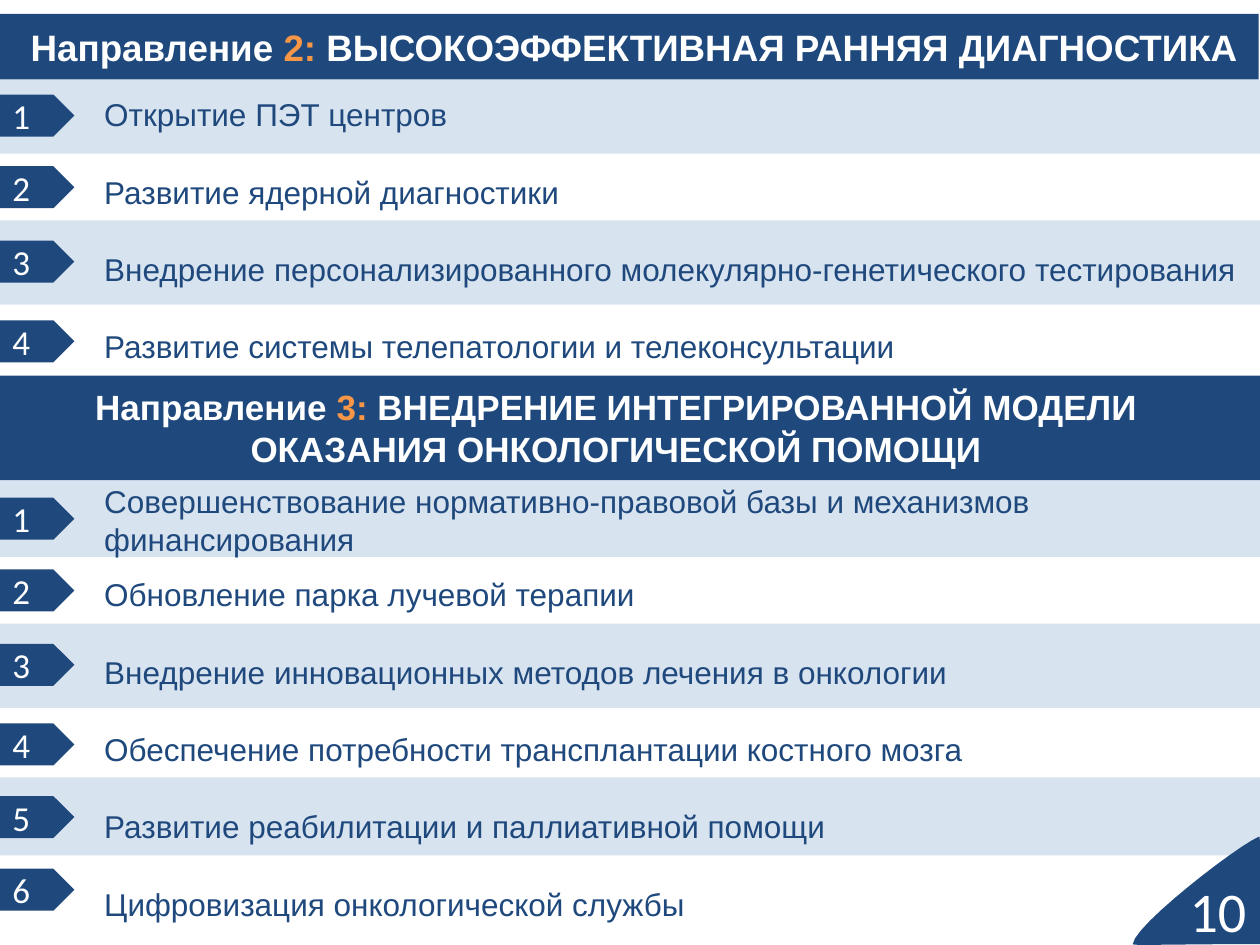
from lxml import etree
from pptx import Presentation
from pptx.dml.color import RGBColor
from pptx.enum.shapes import MSO_SHAPE
from pptx.enum.text import MSO_ANCHOR, MSO_AUTO_SIZE, PP_ALIGN
from pptx.oxml.ns import qn
from pptx.util import Pt

NAVY = RGBColor(0x1F, 0x49, 0x7D)
BLUE = RGBColor(0x4F, 0x81, 0xBD)
ORANGE = RGBColor(0xF7, 0x96, 0x46)
WHITE = RGBColor(0xFF, 0xFF, 0xFF)
RECTANGLE, PENTAGON = MSO_SHAPE.RECTANGLE, MSO_SHAPE.PENTAGON
MIDDLE = MSO_ANCHOR.MIDDLE
NO_AUTOFIT = MSO_AUTO_SIZE.NONE
LEFT, CENTER, RIGHT = PP_ALIGN.LEFT, PP_ALIGN.CENTER, PP_ALIGN.RIGHT

SLIDE_WIDTH, SLIDE_HEIGHT = 720, 540
BAND_OPACITY = "22000"
TAG_OFFSETS = (0, 41, 83.5, 129, 170.5, 212)
ITEM_LEFT, ITEM_WIDTH = 52.5, 667.5
ITEM_GAP = 22.6
CORNER_START = (647.3, 539.5)
CORNER_CURVES = (
    ((648, 529), (706, 484), (719.5, 478)),
    ((720, 478), (720, 482), (720, 492)),
    ((720, 502), (720, 523), (720, 539.5)),
    ((666, 539.5), (647.3, 540.5), (647.3, 539.5)),
)

DIAGNOSTICS = (
    "Открытие ПЭТ центров",
    "Развитие ядерной диагностики",
    "Внедрение персонализированного молекулярно-генетического тестирования",
    "Развитие системы телепатологии и телеконсультации",
)
FINANCING = "Совершенствование нормативно-правовой базы и механизмов финансирования"
CARE = (
    "Обновление парка лучевой терапии",
    "Внедрение инновационных методов лечения в онкологии",
    "Обеспечение потребности трансплантации костного мозга",
    "Развитие реабилитации и паллиативной помощи",
    "Цифровизация онкологической службы",
)


def style_font(font, name, size, color, bold=False):
    font.name = name
    font.size = Pt(size)
    font.color.rgb = color
    font.bold = bold


def paint(shape, color):
    shape.shadow.inherit = False
    shape.fill.solid()
    shape.fill.fore_color.rgb = color
    shape.line.fill.background()


def add_block(slide, kind, left, top, width, height, color):
    block = slide.shapes.add_shape(kind, Pt(left), Pt(top), Pt(width), Pt(height))
    paint(block, color)
    return block


def add_band(slide, top, height):
    band = add_block(slide, RECTANGLE, 0, top, SLIDE_WIDTH, height, BLUE)
    tint = band._element.spPr.find(qn("a:solidFill"))[0]
    etree.SubElement(tint, qn("a:alpha")).set("val", BAND_OPACITY)


def add_tags(slide, top, count):
    for number, offset in enumerate(TAG_OFFSETS[:count], 1):
        tag = add_block(slide, PENTAGON, 0, top + offset, 42.5, 24, NAVY)
        tag.text_frame.text = str(number)
        tag.text_frame.vertical_anchor = MIDDLE
        paragraph = tag.text_frame.paragraphs[0]
        paragraph.alignment = LEFT
        style_font(paragraph.runs[0].font, "Calibri", 20, WHITE)


def write_heading(shape, number, topic, size, alignment):
    frame = shape.text_frame
    frame.word_wrap = True
    frame.auto_size = NO_AUTOFIT
    frame.vertical_anchor = MIDDLE
    paragraph = frame.paragraphs[0]
    paragraph.alignment = alignment
    parts = (("Направление ", WHITE), (f"{number}: ", ORANGE), (topic, WHITE))
    for text, color in parts:
        run = paragraph.add_run()
        run.text = text
        style_font(run.font, "Arial", size, color, True)


def add_items(slide, items, top, height):
    box = slide.shapes.add_textbox(Pt(ITEM_LEFT), Pt(top), Pt(ITEM_WIDTH), Pt(height))
    frame = box.text_frame
    frame.word_wrap = True
    frame.text = "\n".join(items)
    for index, paragraph in enumerate(frame.paragraphs):
        if index:
            paragraph.space_before = Pt(ITEM_GAP)
        style_font(paragraph.runs[0].font, "Arial", 18, NAVY)


def curve_points(start, first, second, end, steps=12):
    for step in range(1, steps + 1):
        t = step / steps
        yield tuple(
            Pt((1 - t) ** 3 * a + 3 * (1 - t) ** 2 * t * b + 3 * (1 - t) * t**2 * c + t**3 * d)
            for a, b, c, d in zip(start, first, second, end)
        )


def add_page_corner(slide, number):
    builder = slide.shapes.build_freeform(*(Pt(value) for value in CORNER_START))
    start = CORNER_START
    for first, second, end in CORNER_CURVES:
        builder.add_line_segments(curve_points(start, first, second, end), close=False)
        start = end
    builder.add_line_segments([], close=True)
    paint(builder.convert_to_shape(), NAVY)

    page = slide.shapes.add_textbox(Pt(658.8), Pt(504.7), Pt(60.5), Pt(30.2))
    page.text_frame.word_wrap = True
    page.text_frame.vertical_anchor = MIDDLE
    page.text_frame.text = number
    paragraph = page.text_frame.paragraphs[0]
    paragraph.alignment = RIGHT
    style_font(paragraph.runs[0].font, "Calibri", 32, WHITE)


def add_section(slide, heading_bottom, tags_top, count):
    add_band(slide, heading_bottom, tags_top + 33.8 - heading_bottom)
    add_band(slide, tags_top + 72, 48.2)
    if count > 4:
        add_band(slide, tags_top + 159.8, 44.6)
    add_tags(slide, tags_top, count)


def main():
    presentation = Presentation()
    presentation.slide_width = Pt(SLIDE_WIDTH)
    presentation.slide_height = Pt(SLIDE_HEIGHT)
    slide = presentation.slides.add_slide(presentation.slide_layouts[5])

    title = slide.shapes.title
    title.left, title.top, title.width, title.height = Pt(0), Pt(8), Pt(719.3), Pt(37.4)
    title.fill.solid()
    title.fill.fore_color.rgb = NAVY
    title.text_frame.margin_left = Pt(17.5)
    title.text_frame.margin_right = Pt(0)
    write_heading(title, 2, "ВЫСОКОЭФФЕКТИВНАЯ РАННЯЯ ДИАГНОСТИКА", 21, LEFT)
    add_section(slide, 45.4, 54, len(DIAGNOSTICS))
    add_items(slide, DIAGNOSTICS, 50.9, 159.8)

    care_heading = add_block(slide, RECTANGLE, 0, 214.6, SLIDE_WIDTH, 59.8, NAVY)
    care_heading.text_frame.margin_right = Pt(23)
    write_heading(
        care_heading, 3, "ВНЕДРЕНИЕ ИНТЕГРИРОВАННОЙ МОДЕЛИ ОКАЗАНИЯ ОНКОЛОГИЧЕСКОЙ ПОМОЩИ", 20, CENTER
    )
    add_section(slide, 274.4, 284.4, len(CARE) + 1)
    add_items(slide, (FINANCING,), 272, 51)
    add_items(slide, CARE, 325.3, 212)

    add_page_corner(slide, "10")
    presentation.save("out.pptx")


if __name__ == "__main__":
    main()
